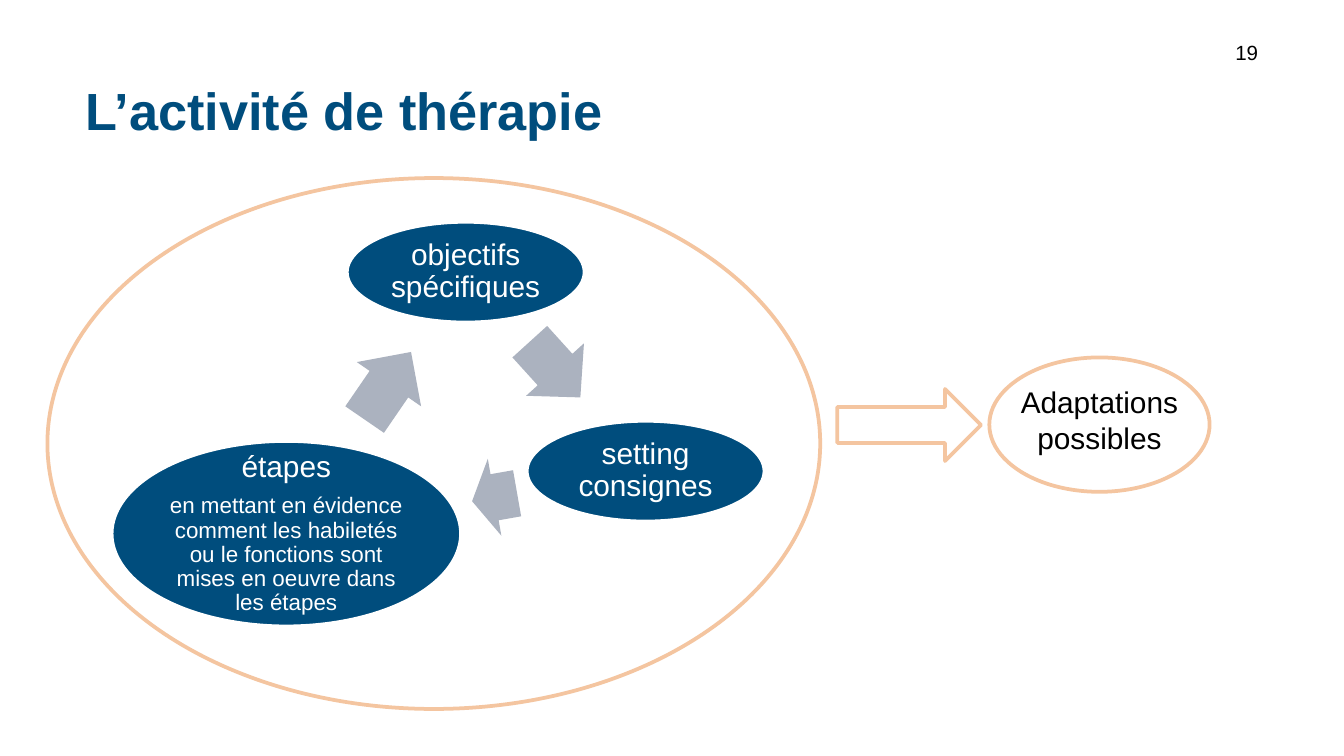
from pptx import Presentation
from pptx.dml.color import RGBColor
from pptx.enum.shapes import MSO_SHAPE
from pptx.enum.text import MSO_ANCHOR, PP_ALIGN
from pptx.util import Pt

FONT = "Arial"
NAVY, GREY, PEACH = "004D7D", "ABB2BF", "F4C5A0"
WHITE, BLACK = "FFFFFF", "000000"


def colour(hex_code):
    return RGBColor.from_string(hex_code)


def write(frame, lines, text_colour, align, bold=False, spacing=1.0, gap=0):
    """Fill a text frame with (text, size) lines."""
    frame.margin_left = frame.margin_right = 0
    frame.margin_top = frame.margin_bottom = 0
    for index, (text, size) in enumerate(lines):
        paragraph = frame.add_paragraph() if index else frame.paragraphs[0]
        paragraph.alignment = align
        paragraph.line_spacing = spacing
        if index:
            paragraph.space_before = Pt(gap)
        run = paragraph.add_run()
        run.text = text
        run.font.name = FONT
        run.font.size = Pt(size)
        run.font.bold = bold
        run.font.color.rgb = colour(text_colour)


def add_label(slide, box, text, size, text_colour, align, bold=False):
    label = slide.shapes.add_textbox(*map(Pt, box)).text_frame
    label.word_wrap = True
    write(label, [(text, size)], text_colour, align, bold)


def add_figure(slide, preset, box, fill=None, line=None):
    figure = slide.shapes.add_shape(preset, *map(Pt, box))
    figure.shadow.inherit = False
    if fill:
        figure.fill.solid()
        figure.fill.fore_color.rgb = colour(fill)
    else:
        figure.fill.background()
    if line:
        figure.line.color.rgb = colour(line)
        figure.line.width = Pt(2)
    else:
        figure.line.fill.background()
    return figure


def add_stage(slide, box, lines):
    stage = add_figure(slide, MSO_SHAPE.OVAL, box, NAVY, WHITE)
    frame = stage.text_frame
    frame.word_wrap = True
    frame.vertical_anchor = MSO_ANCHOR.MIDDLE
    write(frame, lines, WHITE, PP_ALIGN.CENTER, spacing=0.9, gap=5.6)


def add_cycle_arrow(slide, box, angle):
    arrow = add_figure(slide, MSO_SHAPE.RIGHT_ARROW, box, GREY)
    arrow.adjustments[0] = 0.6
    arrow.rotation = angle


def main():
    deck = Presentation()
    deck.slide_width, deck.slide_height = Pt(720), Pt(405)
    slide = deck.slides.add_slide(deck.slide_layouts[6])

    # Title and page number
    add_label(slide, (46, 41.8, 628, 34), "L’activité de thérapie", 28, NAVY,
              PP_ALIGN.LEFT, bold=True)
    add_label(slide, (512, 21.6, 162, 20), "19", 11, BLACK, PP_ALIGN.RIGHT)

    # Therapy cycle: three stages, each followed by its arrow
    stages = [
        ((185.8, 118.8, 127.4, 54), [("objectifs spécifiques", 16)]),
        ((282.2, 225.4, 127.4, 54), [("setting consignes", 16)]),
        ((59.8, 236.2, 187.2, 99.4), [
            ("étapes", 16),
            ("en mettant en évidence comment les habiletés ou le fonctions "
             "sont mises en oeuvre dans les étapes", 12)]),
    ]
    cycle_arrows = [
        ((277.2, 177.1, 40.3, 41.8), 47.8),
        ((252.7, 245.5, 24.5, 41.8), 170),
        ((185.8, 185.8, 43.9, 41.8), 304.5),
    ]
    for (box, lines), (arrow_box, angle) in zip(stages, cycle_arrows):
        add_stage(slide, box, lines)
        add_cycle_arrow(slide, arrow_box, angle)

    # Outline around the cycle, leading to the adaptations
    add_figure(slide, MSO_SHAPE.OVAL, (25.4, 95.4, 414, 284.4), line=PEACH)
    add_figure(slide, MSO_SHAPE.RIGHT_ARROW, (448.6, 208.4, 77, 38.6), line=PEACH)
    adaptations = add_figure(slide, MSO_SHAPE.OVAL, (530, 191.5, 118, 72), line=PEACH)
    frame = adaptations.text_frame
    frame.word_wrap = False
    frame.vertical_anchor = MSO_ANCHOR.MIDDLE
    write(frame, [("Adaptations", 16), ("possibles", 16)], BLACK, PP_ALIGN.CENTER)
    frame.margin_bottom = Pt(5)

    deck.save("out.pptx")


if __name__ == "__main__":
    main()
